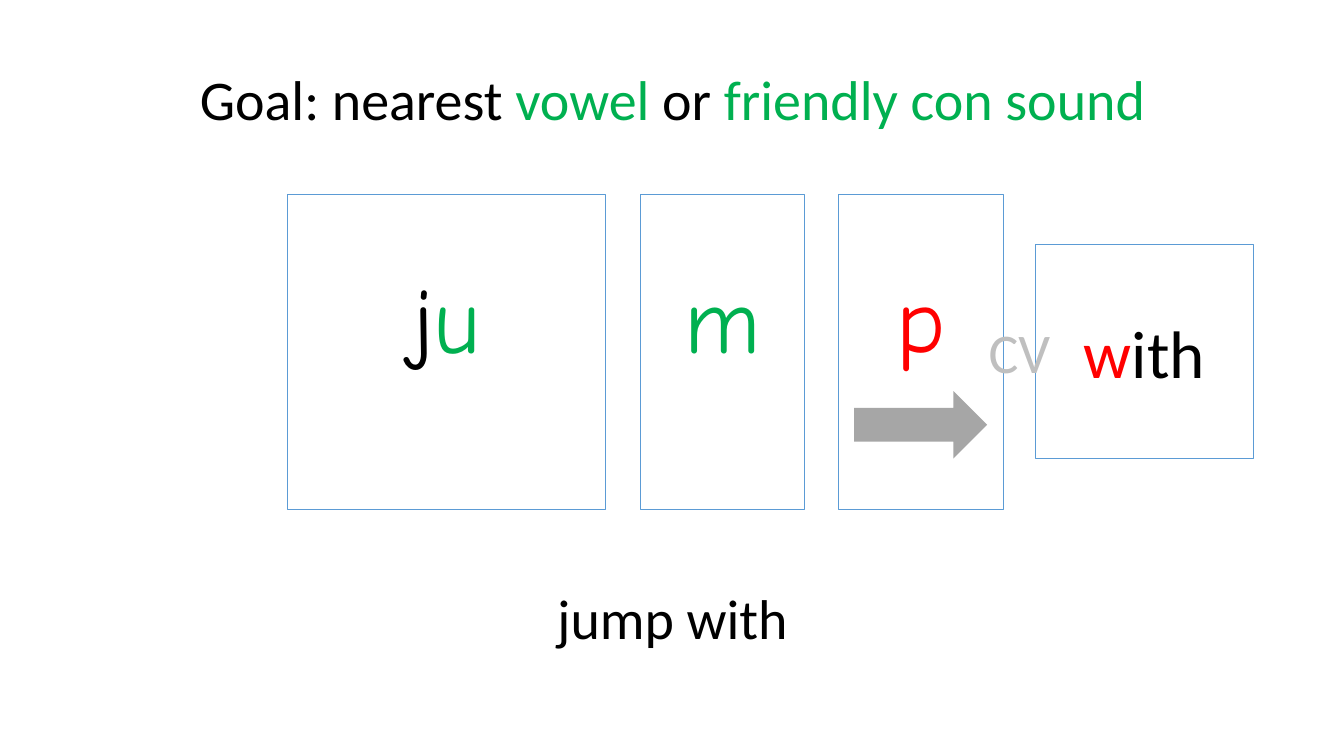
from dataclasses import dataclass

from pptx import Presentation
from pptx.dml.color import RGBColor
from pptx.enum.shapes import MSO_SHAPE
from pptx.enum.text import MSO_ANCHOR, MSO_AUTO_SIZE, PP_ALIGN
from pptx.util import Inches, Pt

RECTANGLE = MSO_SHAPE.RECTANGLE
RIGHT_ARROW = MSO_SHAPE.RIGHT_ARROW
TOP = MSO_ANCHOR.TOP
CENTER = PP_ALIGN.CENTER
NO_AUTOFIT = MSO_AUTO_SIZE.NONE
TITLE_ONLY = 5


@dataclass(frozen=True)
class Theme:
    black: str = "000000"
    green: str = "00B050"
    red: str = "FF0000"
    pale: str = "BFBFBF"
    arrow: str = "A6A6A6"
    border: str = "5B9BD5"
    body_font: str = "Calibri"
    sound_font: str = "Comic Neue"
    caption_size: int = 40
    word_size: int = 48
    sound_size: int = 66


THEME = Theme()


def write(shape, runs, size=THEME.caption_size, font=THEME.body_font, top_inset=0.05):
    """Fill a shape with one centred line made of (text, colour) runs."""
    frame = shape.text_frame
    frame.word_wrap = True
    frame.auto_size = NO_AUTOFIT
    frame.vertical_anchor = TOP
    frame.margin_top = Inches(top_inset)
    line = frame.paragraphs[0]
    line.alignment = CENTER
    for text, colour in runs:
        run = line.add_run()
        run.text = text
        run.font.name = font
        run.font.size = Pt(size)
        run.font.color.rgb = RGBColor.from_string(colour)


def add_title(slide, bounds, runs):
    title = slide.shapes.title
    title.left, title.top, title.width, title.height = map(Inches, bounds)
    write(title, runs)


def add_caption(slide, bounds, runs):
    write(slide.shapes.add_textbox(*map(Inches, bounds)), runs)


def add_card(slide, bounds, runs, size, font):
    card = slide.shapes.add_shape(RECTANGLE, *map(Inches, bounds))
    card.shadow.inherit = False
    card.fill.background()
    card.line.color.rgb = RGBColor.from_string(THEME.border)
    card.line.width = Pt(0.75)
    write(card, runs, size=size, font=font, top_inset=0.66)


def add_blend_arrow(slide, bounds):
    arrow = slide.shapes.add_shape(RIGHT_ARROW, *map(Inches, bounds))
    arrow.shadow.inherit = False
    arrow.fill.solid()
    arrow.fill.fore_color.rgb = RGBColor.from_string(THEME.arrow)
    arrow.line.fill.background()


def main():
    deck = Presentation()
    deck.slide_width, deck.slide_height = Inches(13.33), Inches(7.5)
    slide = deck.slides.add_slide(deck.slide_layouts[TITLE_ONLY])

    # Goal
    add_title(slide, (0.71, 0.59, 11.92, 0.77), [
        ("Goal: nearest ", THEME.black), ("vowel", THEME.green),
        (" or ", THEME.black), ("friendly con sound", THEME.green)])

    # Sounds of the first word
    sounds = [
        (2.85, 3.16, [("j", THEME.black), ("u", THEME.green)]),
        (6.35, 1.63, [("m", THEME.green)]),
        (8.32, 1.63, [("p", THEME.red)]),
    ]
    for left, width, runs in sounds:
        add_card(slide, (left, 1.93, width, 3.13), runs,
                 THEME.sound_size, THEME.sound_font)

    # Following word
    add_card(slide, (10.27, 2.43, 2.16, 2.12),
             [("w", THEME.red), ("ith", THEME.black)],
             THEME.word_size, THEME.body_font)

    # Link between the words, and the phrase
    add_caption(slide, (4.89, 5.74, 3.56, 0.77), [("jump with", THEME.black)])
    add_caption(slide, (9.11, 3.1, 2, 0.77), [("CV", THEME.pale)])
    add_blend_arrow(slide, (8.47, 3.88, 1.32, 0.67))

    deck.save("out.pptx")


if __name__ == "__main__":
    main()
